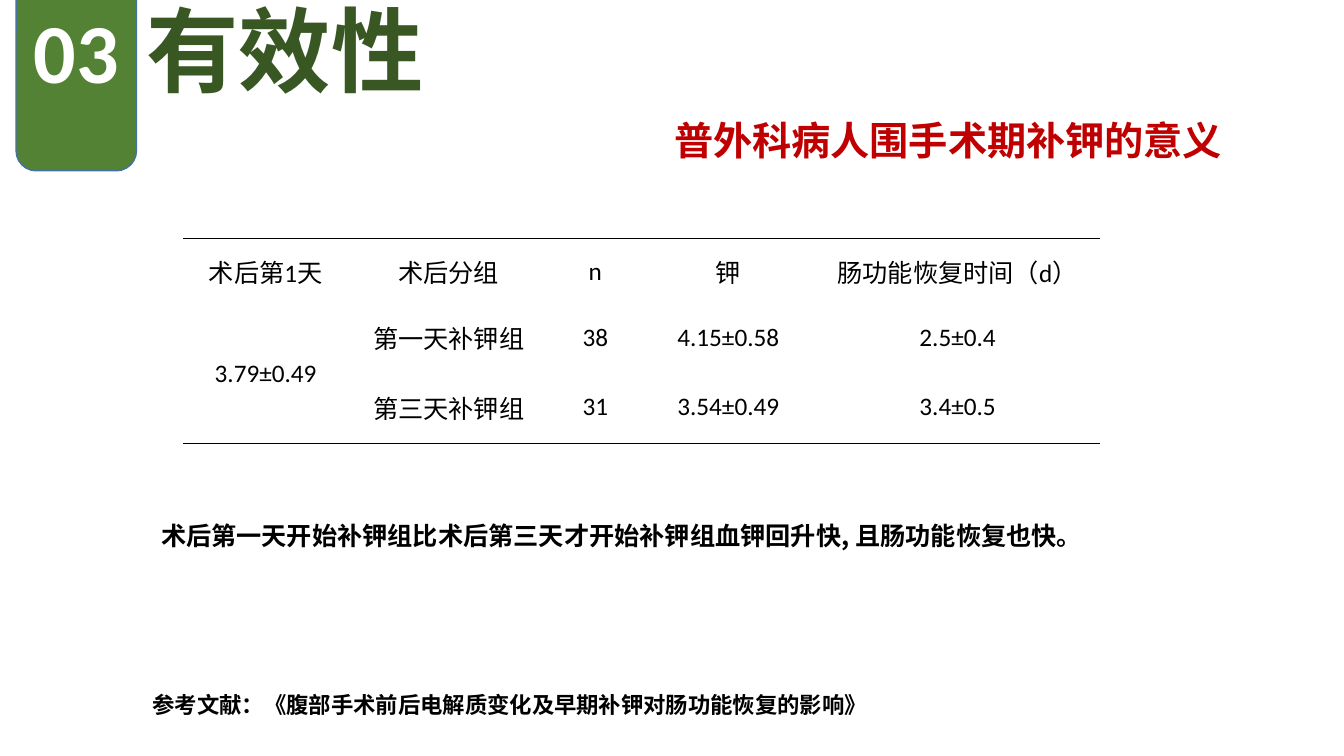
import pptx
import pptx.util
import pptx.dml.color
import pptx.enum.shapes
import pptx.enum.text
import pptx.oxml
import pptx.oxml.ns
from pptx.util import Pt

COLOURS = {
    "black": "000000",
    "white": "FFFFFF",
    "tab": "548235",
    "tab line": "43739E",
    "heading": "385723",
    "topic": "C00000",
}
LATIN = "Calibri"
CHINESE = "Noto Sans CJK SC"
ALIGN = pptx.enum.text.PP_ALIGN
ANCHOR = pptx.enum.text.MSO_ANCHOR

COLUMN_WIDTHS = (117.5, 144, 65.5, 124.5, 203)
ROW_HEIGHTS = (47, 47, 52.5)
RESULTS = (
    ("术后第1天", "术后分组", "n", "钾", "肠功能恢复时间（d）"),
    ("3.79±0.49", "第一天补钾组", "38", "4.15±0.58", "2.5±0.4"),
    ("", "第三天补钾组", "31", "3.54±0.49", "3.4±0.5"),
)


def rgb(name):
    return pptx.dml.color.RGBColor.from_string(COLOURS[name])


def write(frame, text, size, colour="black", bold=True, align=ALIGN.LEFT, font=CHINESE):
    """Fill a text frame with one paragraph in a Latin and a Chinese font."""
    para = frame.paragraphs[0]
    para.text = text
    para.alignment = align
    para.font.size = Pt(size)
    para.font.bold = bold
    para.font.name = font
    para.font.color.rgb = rgb(colour)
    east_asian = pptx.oxml.parse_xml(
        f'<a:ea {pptx.oxml.ns.nsdecls("a")} typeface="{CHINESE}"/>')
    para.font._element.find(pptx.oxml.ns.qn("a:latin")).addnext(east_asian)


def add_text(page, box, text, size, colour="black", align=ALIGN.LEFT, anchor=ANCHOR.TOP):
    frame = page.shapes.add_textbox(*map(Pt, box)).text_frame
    frame.word_wrap = True
    frame.vertical_anchor = anchor
    write(frame, text, size, colour, align=align)
    return frame


def add_section_header(page, left, top):
    """Draw the numbered tab hanging from the top edge, with the heading beside it."""
    width, height = 86, 173
    tab = page.shapes.add_shape(
        pptx.enum.shapes.MSO_SHAPE.FLOWCHART_ALTERNATE_PROCESS,
        Pt(left), Pt(top), Pt(width), Pt(height))
    tab.shadow.inherit = False
    tab.fill.solid()
    tab.fill.fore_color.rgb = rgb("tab")
    tab.line.color.rgb = rgb("tab line")
    tab.line.width = Pt(1)
    tab.text_frame.vertical_anchor = ANCHOR.MIDDLE
    write(tab.text_frame, "03", 60, "white", align=ALIGN.CENTER, font=LATIN)
    heading = add_text(page, (left + width, top + 42.5, 212, 87), "有效性", 66, "heading",
                       ALIGN.CENTER)
    heading.margin_left = heading.margin_right = 0


def set_rule(cell, side):
    """Give a cell a thin black border on one side: lnT or lnB."""
    rule = pptx.oxml.parse_xml(
        f'<a:{side} {pptx.oxml.ns.nsdecls("a")} w="12700"><a:solidFill>'
        f'<a:srgbClr val="{COLOURS["black"]}"/></a:solidFill></a:{side}>')
    cell._tc.get_or_add_tcPr().insert(0, rule)


def add_results_table(page, left, top):
    """Lay out the results with rules above and below only."""
    frame = page.shapes.add_table(
        len(ROW_HEIGHTS), len(COLUMN_WIDTHS), Pt(left), Pt(top),
        Pt(sum(COLUMN_WIDTHS)), Pt(sum(ROW_HEIGHTS)))
    table = frame.table
    table.first_row = table.horz_banding = False
    # The "No Style, No Grid" table style
    table._tbl.tblPr.find(pptx.oxml.ns.qn("a:tableStyleId")).text = (
        "{2D5ABB26-0587-4C30-8999-92F81FD0307C}")
    for column, width in zip(table.columns, COLUMN_WIDTHS):
        column.width = Pt(width)
    last = len(RESULTS) - 1
    for index, (row, height, values) in enumerate(zip(table.rows, ROW_HEIGHTS, RESULTS)):
        row.height = Pt(height)
        for cell, value in zip(row.cells, values):
            cell.fill.background()
            cell.vertical_anchor = ANCHOR.MIDDLE
            if value:
                write(cell.text_frame, value, 18, bold=False, align=ALIGN.CENTER, font=LATIN)
            if index == 0:
                set_rule(cell, "lnT")
            if index == last:
                set_rule(cell, "lnB")
    baseline = table.cell(1, 0)
    baseline.merge(table.cell(last, 0))
    set_rule(baseline, "lnB")


def add_notes_below(page, left, top):
    """Write the conclusion and, further down, the reference."""
    conclusion = add_text(
        page, (left, top, 730, 29),
        "术后第一天开始补钾组比术后第三天才开始补钾组血钾回升快, 且肠功能恢复也快。", 18)
    conclusion.margin_left = Pt(19)
    add_text(page, (left + 6, top + 122, 623, 27),
             "参考文献：《腹部手术前后电解质变化及早期补钾对肠功能恢复的影响》", 16)


def main():
    deck = pptx.Presentation()
    deck.slide_width, deck.slide_height = Pt(960), Pt(540)
    page = deck.slides.add_slide(deck.slide_layouts[6])
    topic = add_text(page, (393, 57, 487, 90), "普外科病人围手术期补钾的意义", 28, "topic",
                     ALIGN.RIGHT, ANCHOR.MIDDLE)
    topic.paragraphs[0].line_spacing = 0.9
    add_results_table(page, 131, 170.5)
    add_notes_below(page, 96, 368)
    add_section_header(page, 11.5, -51)
    deck.save("out.pptx")


if __name__ == "__main__":
    main()
